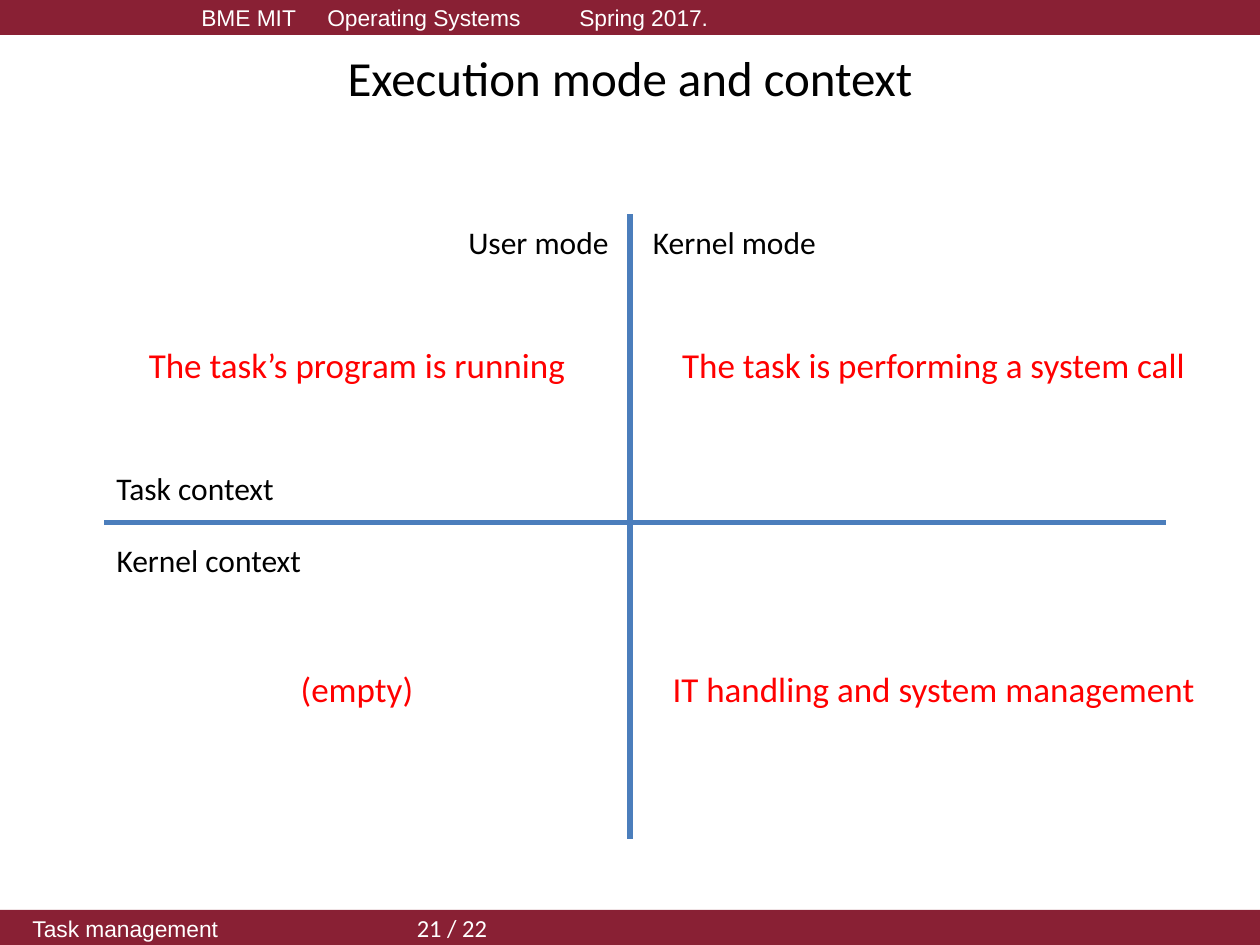
from lxml.etree import SubElement as Sub
from pptx import Presentation
from pptx.dml.color import RGBColor
from pptx.enum.shapes import MSO_CONNECTOR as Link, MSO_SHAPE as Kind
from pptx.enum.text import MSO_ANCHOR as Anchor, MSO_AUTO_SIZE as Auto, PP_ALIGN as Align
from pptx.oxml.ns import qn
from pptx.util import Pt

WINE = RGBColor(0x89, 0x20, 0x34)
BLUE = RGBColor(0x4B, 0x7E, 0xBC)
RED = RGBColor(0xFF, 0, 0)
BLACK = RGBColor(0, 0, 0)
WHITE = RGBColor(0xFF, 0xFF, 0xFF)
WIDE, HIGH = 720, 540
BAR = 20


def write(para, text, size=18, face="Calibri", color=BLACK, align=Align.LEFT):
    para.alignment = align
    run = para.add_run()
    run.text = text
    font = run.font
    font.size, font.name, font.color.rgb = Pt(size), face, color


class Page:
    def __init__(self, deck):
        self.slide = deck.slides.add_slide(deck.slide_layouts[5])
        self.shapes = self.slide.shapes

    def title(self, text, *box):
        head = self.shapes.title
        head.left, head.top, head.width, head.height = map(Pt, box)
        frame = head.text_frame
        frame.vertical_anchor = Anchor.MIDDLE
        write(frame.paragraphs[0], text, size=28, align=Align.CENTER)

    def bar(self, top, indent, parts):
        band = self.shapes.add_shape(Kind.RECTANGLE, 0, Pt(top), Pt(WIDE), Pt(BAR))
        band.shadow.inherit = False
        band.fill.solid()
        band.fill.fore_color.rgb = WINE
        band.line.fill.background()
        frame = band.text_frame
        frame.word_wrap = True
        frame.vertical_anchor = Anchor.MIDDLE
        para = frame.paragraphs[0]
        props = para._p.get_or_add_pPr()
        props.set("marL", str(Pt(indent)))
        props.set("indent", "0")
        props.set("defTabSz", str(Pt(72)))
        for text, size, face in parts:
            write(para, text, size=size, face=face, color=WHITE)

    def axis(self, *ends):
        line = self.shapes.add_connector(Link.STRAIGHT, *map(Pt, ends))
        line.line.color.rgb = BLUE
        line.line.width = Pt(3)
        Sub(line._element.spPr, qn("a:effectLst"))

    def label(self, text, left, top, width, height=29, **style):
        box = self.shapes.add_textbox(*map(Pt, (left, top, width, height)))
        frame = box.text_frame
        frame.word_wrap = False
        frame.auto_size = Auto.SHAPE_TO_FIT_TEXT
        write(frame.paragraphs[0], text, **style)

    def cell(self, text, mid, top, width):
        self.label(text, mid - width / 2, top, width, 32,
                   size=20, color=RED, align=Align.CENTER)


def main():
    deck = Presentation()
    deck.slide_width, deck.slide_height = Pt(WIDE), Pt(HIGH)
    page = Page(deck)

    page.bar(0, 108, [("BME MIT\tOperating Systems\tSpring 2017.", 13, "Arial")])
    page.bar(HIGH - BAR, 11.5, [("Task management\t\t ", 13, "Arial"),
                                ("21 / 22", 14, "Calibri")])
    page.title("Execution mode and context", 36, 22, 648, 44)

    page.axis(360, 122.5, 360, 479.5)
    page.axis(666, 298.5, 59.5, 298.5)

    page.label("User mode", 260.5, 124, 96)
    page.label("Kernel mode", 366, 124, 109)
    page.label("Task context", 59.5, 264.5, 105)
    page.label("Kernel context", 59.5, 305.5, 121)

    left, right = 204, 533.5
    upper, lower = 193, 378
    page.cell("The task’s program is running", left, upper, 255)
    page.cell("The task is performing a system call", right, upper, 305)
    page.cell("(empty)", left, lower, 80)
    page.cell("IT handling and system management", right, lower, 315)

    deck.save("out.pptx")


if __name__ == "__main__":
    main()
